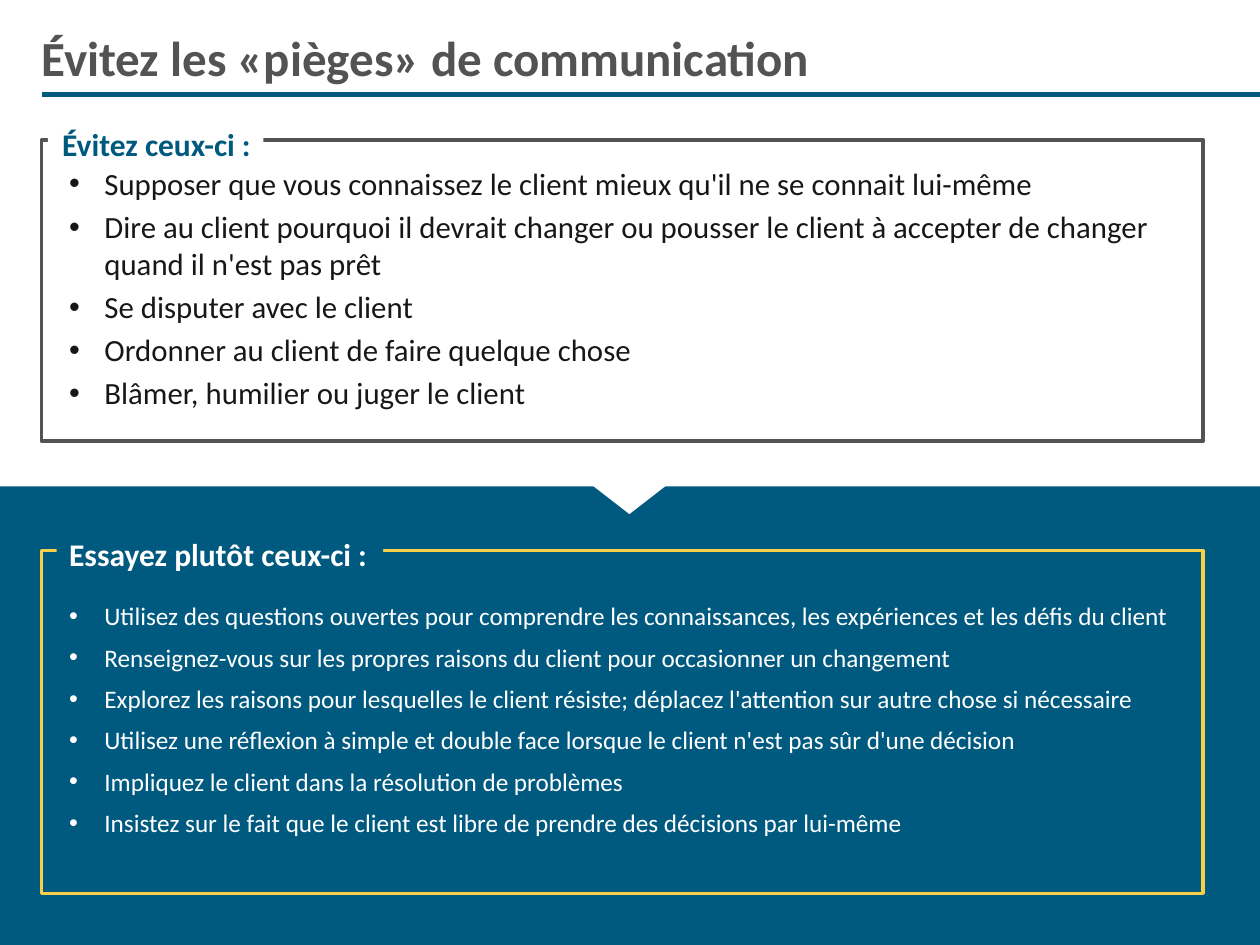
from lxml.etree import SubElement as Sub
from pptx import Presentation
from pptx.dml.color import RGBColor as Rgb
from pptx.enum.shapes import MSO_CONNECTOR as Conn, MSO_SHAPE as Kind
from pptx.enum.text import MSO_ANCHOR as Anchor, PP_ALIGN as Align
from pptx.oxml.ns import qn
from pptx.util import Inches, Pt

HUE = {"blue": "005A80", "gray": "535353", "gold": "F8CF46",
       "ink": "181717", "white": "FFFFFF"}

deck = Presentation()
deck.slide_width, deck.slide_height = Inches(10), Inches(7.5)
col, row = deck.slide_width / 100, deck.slide_height / 100
slide = deck.slides.add_slide(deck.slide_layouts[6])
shapes = slide.shapes


def draw(x, y, w, h, kind=Kind.RECTANGLE, fill=None, line=None):
    shape = shapes.add_shape(kind, int(x * col), int(y * row), int(w * col), int(h * row))
    shape.shadow.inherit = False
    if fill:
        shape.fill.solid()
        shape.fill.fore_color.rgb = Rgb.from_string(HUE[fill])
    else:
        shape.fill.background()
    if line:
        shape.line.color.rgb = Rgb.from_string(HUE[line])
        shape.line.width = Pt(2)
    else:
        shape.line.fill.background()
    return shape


def write(text, box=None, shape=None, size=18, hue="white", bold=False, left=0.1,
          space=1.0, align=Align.LEFT, anchor=Anchor.MIDDLE, wrap=True, dots=False):
    if shape is None:
        x, y, w, h = box
        shape = shapes.add_textbox(int(x * col), int(y * row), int(w * col), int(h * row))
    frame = shape.text_frame
    frame.word_wrap = wrap
    frame.vertical_anchor = anchor
    frame.margin_left = Inches(left)
    frame.text = text
    for i, para in enumerate(frame.paragraphs):
        para.alignment = align
        para.line_spacing = space
        if dots:
            if i:
                para.space_before = Pt(round(size * 0.2, 1))
            props = para._p.get_or_add_pPr()
            props.set("marL", str(Inches(0.28)))
            props.set("indent", str(-Inches(0.28)))
            Sub(props, qn("a:buFont"), typeface="Arial")
            Sub(props, qn("a:buChar"), char="•")
        font = para.font
        font.name, font.size, font.bold = "Calibri", Pt(size), bold
        font.color.rgb = Rgb.from_string(HUE[hue])


rule = shapes.add_connector(Conn.STRAIGHT, int(3.3 * col), int(10 * row),
                            int(100 * col), int(10 * row))
rule.line.color.rgb = Rgb.from_string(HUE["blue"])
rule.line.width = Pt(3)
Sub(rule._element.spPr, qn("a:effectLst"))

draw(0, 51.47, 100, 48.53, fill="blue")
notch = draw(44.4, 48.67, 11.1, 5.73, Kind.ISOSCELES_TRIANGLE, fill="white")
notch.rotation = 180

write("Évitez les «pièges» de communication", (3.3, 2.13, 90, 7.87),
      size=28, hue="gray", bold=True, left=0)

avoid = [
    "Supposer que vous connaissez le client mieux qu'il ne se connait lui-même",
    "Dire au client pourquoi il devrait changer ou pousser le client à accepter "
    "de changer quand il n'est pas prêt",
    "Se disputer avec le client",
    "Ordonner au client de faire quelque chose",
    "Blâmer, humilier ou juger le client",
]
prefer = [
    "Utilisez des questions ouvertes pour comprendre les connaissances, "
    "les expériences et les défis du client",
    "Renseignez-vous sur les propres raisons du client pour occasionner un changement",
    "Explorez les raisons pour lesquelles le client résiste; déplacez l'attention "
    "sur autre chose si nécessaire",
    "Utilisez une réflexion à simple et double face lorsque le client n'est pas sûr "
    "d'une décision",
    "Impliquez le client dans la résolution de problèmes",
    "Insistez sur le fait que le client est libre de prendre des décisions par lui-même",
]

panels = [
    dict(top=14.8, high=31.87, edge="gray", back="white",
         head="Évitez ceux-ci :", tab=(3.8, 11.87, 17.1, 5.87), tone="blue", side=Align.RIGHT,
         tips=avoid, area=(4.5, 16.8, 88.9, 30.53), size=17.6, hue="ink", space=1.0),
    dict(top=58.27, high=36.27, edge="gold", back="blue",
         head="Essayez plutôt ceux-ci :", tab=(4.5, 55.33, 25.9, 5.87), tone="white",
         side=Align.LEFT,
         tips=prefer, area=(4.5, 62.27, 92.2, 30.27), size=14.4, hue="white", space=1.2),
]
for p in panels:
    draw(3.3, p["top"], 92.2, p["high"], line=p["edge"])
    write("\n".join(p["tips"]), p["area"], size=p["size"], hue=p["hue"],
          space=p["space"], anchor=Anchor.TOP, dots=True)
    tab = draw(*p["tab"], fill=p["back"])
    write(p["head"], shape=tab, hue=p["tone"], bold=True, space=1.2,
          align=p["side"], wrap=False)

deck.save("out.pptx")
